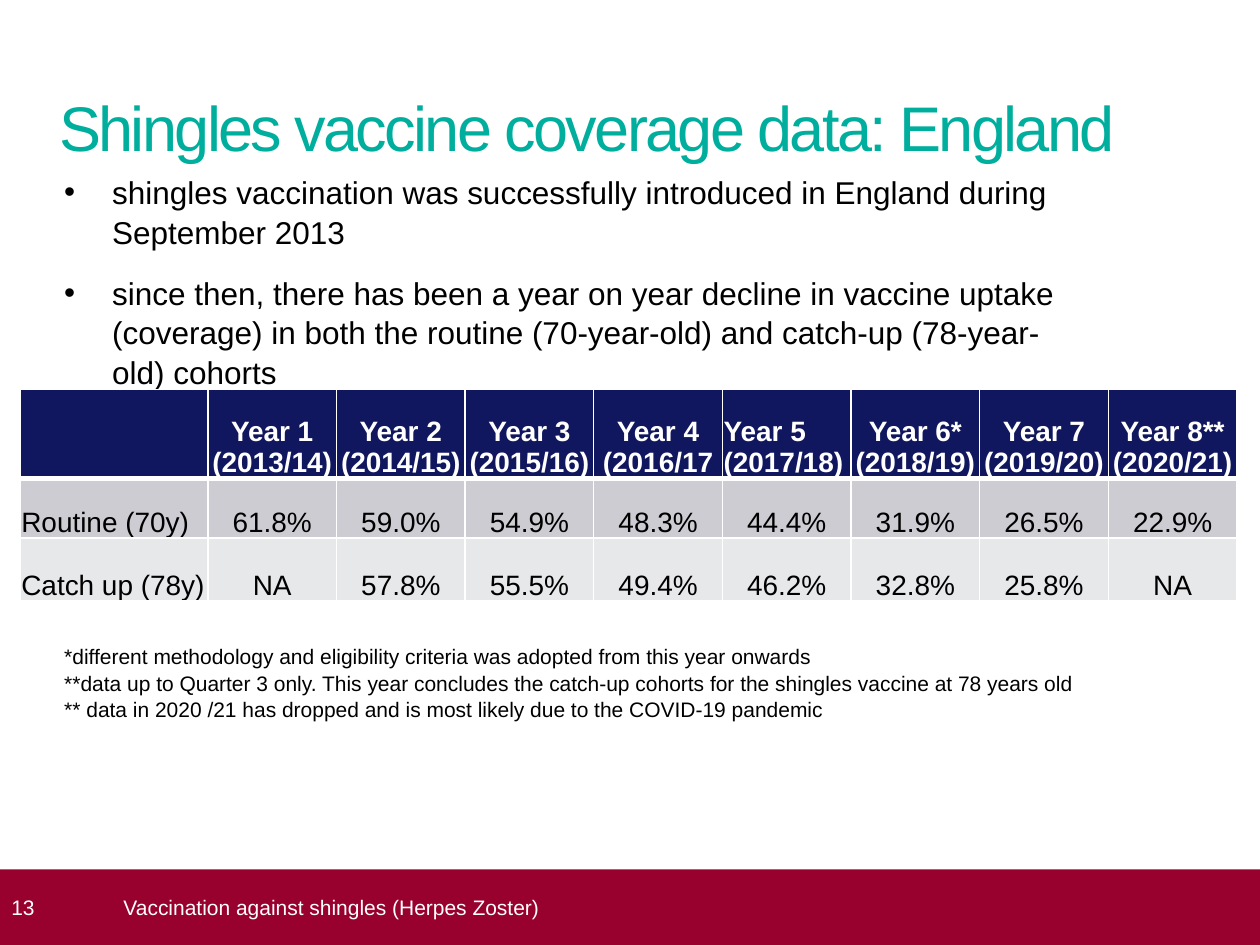
from lxml.etree import SubElement
from pptx import Presentation
from pptx.dml.color import RGBColor
from pptx.enum.shapes import MSO_SHAPE as Shape
from pptx.enum.text import MSO_ANCHOR as Anchor, PP_ALIGN as Align
from pptx.oxml.ns import qn
from pptx.util import Inches, Pt

TITLE = "Shingles vaccine coverage data: England"
BULLETS = [
    "shingles vaccination was successfully introduced in England during September 2013",
    "since then, there has been a year on year decline in vaccine uptake (coverage) "
    "in both the routine (70-year-old) and catch-up (78-year-old) cohorts",
]
NOTES = [
    "*different methodology and eligibility criteria was adopted from this year onwards",
    "**data up to Quarter 3 only. This year concludes the catch-up cohorts for the "
    "shingles vaccine at 78 years old",
    "** data in 2020 /21 has dropped and is most likely due to the COVID-19 pandemic",
]
COVERAGE = [
    ["", "Year 1 (2013/14)", "Year 2 (2014/15)", "Year 3 (2015/16)", "Year 4 (2016/17",
     "Year 5 (2017/18)", "Year 6* (2018/19)", "Year 7 (2019/20)", "Year 8** (2020/21)"],
    ["Routine (70y)", "61.8%", "59.0%", "54.9%", "48.3%", "44.4%", "31.9%", "26.5%", "22.9%"],
    ["Catch up (78y)", "NA", "57.8%", "55.5%", "49.4%", "46.2%", "32.8%", "25.8%", "NA"],
]
LEFT_HEADER = "Year 5 (2017/18)"
PAGE_NUMBER = "13"
FOOTER = "Vaccination against shingles (Herpes Zoster)"

COLORS = {"title": "00AE9E", "text": "000000", "white": "FFFFFF", "footer": "98002E",
          "header": "11175E", "routine": "CCCCD2", "catch_up": "E7E8EA"}
ROW_FILLS = ["header", "routine", "catch_up"]
ROW_HEIGHTS = [0.71, 0.47, 0.5]
LABEL_WIDTH, TABLE_WIDTH = 1.49, 9.66
WIDTH, HEIGHT = 10, 7.5
FOOTER_HEIGHT = HEIGHT * 0.08
FOOTER_TOP = HEIGHT - FOOTER_HEIGHT


def color(name):
    return RGBColor.from_string(COLORS[name])


def set_margins(target, left=0, top=0, right=0, bottom=0):
    margins = {"left": left, "top": top, "right": right, "bottom": bottom}
    for side, value in margins.items():
        setattr(target, f"margin_{side}", Inches(value))


def write(para, text, size, ink="text", bold=False):
    span = para.add_run()
    span.text = text
    for name, value in {"name": "Arial", "size": Pt(size), "bold": bold}.items():
        setattr(span.font, name, value)
    span.font.color.rgb = color(ink)
    return span


def fill_frame(frame, lines, size, ink="text", anchor=Anchor.TOP, **paragraph_format):
    """Write one paragraph per line and return the paragraphs."""
    frame.word_wrap = True
    frame.vertical_anchor = anchor
    for index, line in enumerate(lines):
        para = frame.paragraphs[0] if index == 0 else frame.add_paragraph()
        para.alignment = Align.LEFT
        for name, value in paragraph_format.items():
            setattr(para, name, value)
        write(para, line, size, ink)
    return frame.paragraphs


def add_text(slide, place, lines, size, **options):
    box = slide.shapes.add_textbox(*map(Inches, place))
    set_margins(box.text_frame)
    return fill_frame(box.text_frame, lines, size, **options)


def add_bullet(para):
    props = para._p.get_or_add_pPr()
    props.set("marL", str(Inches(0.38)))
    props.set("indent", str(Inches(-0.38)))
    SubElement(props, qn("a:buFont"), typeface="Arial")
    SubElement(props, qn("a:buChar"), char="•")


def add_borders(cell, widths):
    props = cell._tc.get_or_add_tcPr()
    for side, width in widths.items():
        line = SubElement(props, qn(f"a:ln{side}"), w=str(Pt(width)))
        paint = SubElement(line, qn("a:solidFill"))
        SubElement(paint, qn("a:srgbClr"), val=COLORS["white"])


def add_coverage_table(slide):
    years = len(COVERAGE[0]) - 1
    frame = slide.shapes.add_table(len(COVERAGE), years + 1, Inches(0.16), Inches(3.09),
                                   Inches(TABLE_WIDTH), Inches(sum(ROW_HEIGHTS)))
    table = frame.table
    for index, column in enumerate(table.columns):
        share = (TABLE_WIDTH - LABEL_WIDTH) / years
        column.width = Inches(share if index else LABEL_WIDTH)
    for r, values in enumerate(COVERAGE):
        table.rows[r].height = Inches(ROW_HEIGHTS[r])
        is_header = r == 0
        for c, value in enumerate(values):
            cell = table.cell(r, c)
            set_margins(cell, 0.01, 0.01, 0.01)
            cell.vertical_anchor = Anchor.BOTTOM
            add_borders(cell, {"L": 1, "R": 1, "T": 3 if r == 1 else 1,
                               "B": 3 if is_header else 1})
            cell.fill.solid()
            cell.fill.fore_color.rgb = color(ROW_FILLS[r])
            para = cell.text_frame.paragraphs[0]
            to_left = c == 0 or value == LEFT_HEADER
            para.alignment = Align.LEFT if to_left else Align.CENTER
            if value:
                write(para, value, 16, "white" if is_header else "text", is_header)


def add_footer(slide):
    bar = slide.shapes.add_shape(Shape.RECTANGLE, 0, Inches(FOOTER_TOP),
                                 Inches(WIDTH), Inches(FOOTER_HEIGHT))
    bar.shadow.inherit = False
    bar.fill.solid()
    bar.fill.fore_color.rgb = color("footer")
    bar.line.fill.background()
    set_margins(bar.text_frame, left=0.09, right=0.1)
    fill_frame(bar.text_frame, [PAGE_NUMBER], 12, ink="white", anchor=Anchor.MIDDLE)
    add_text(slide, (0.98, FOOTER_TOP, 8.82, FOOTER_HEIGHT), [FOOTER], 12,
             ink="white", anchor=Anchor.MIDDLE)


def main():
    deck = Presentation()
    deck.slide_width, deck.slide_height = Inches(WIDTH), Inches(HEIGHT)
    slide = deck.slides.add_slide(deck.slide_layouts[6])
    title = add_text(slide, (0.47, 0.7, 9.06, 0.73), [TITLE], 36, ink="title")[0]
    title.runs[0].font._element.set("spc", "-150")
    bullets = add_text(slide, (0.51, 1.36, 8.11, 1.7), BULLETS, 18,
                       line_spacing=1.05, space_before=Pt(12))
    for para in bullets:
        add_bullet(para)
    add_text(slide, (0.51, 5.1, 8.11, 0.65), NOTES, 12, line_spacing=1.05)
    add_footer(slide)
    add_coverage_table(slide)
    deck.save("out.pptx")


if __name__ == "__main__":
    main()
